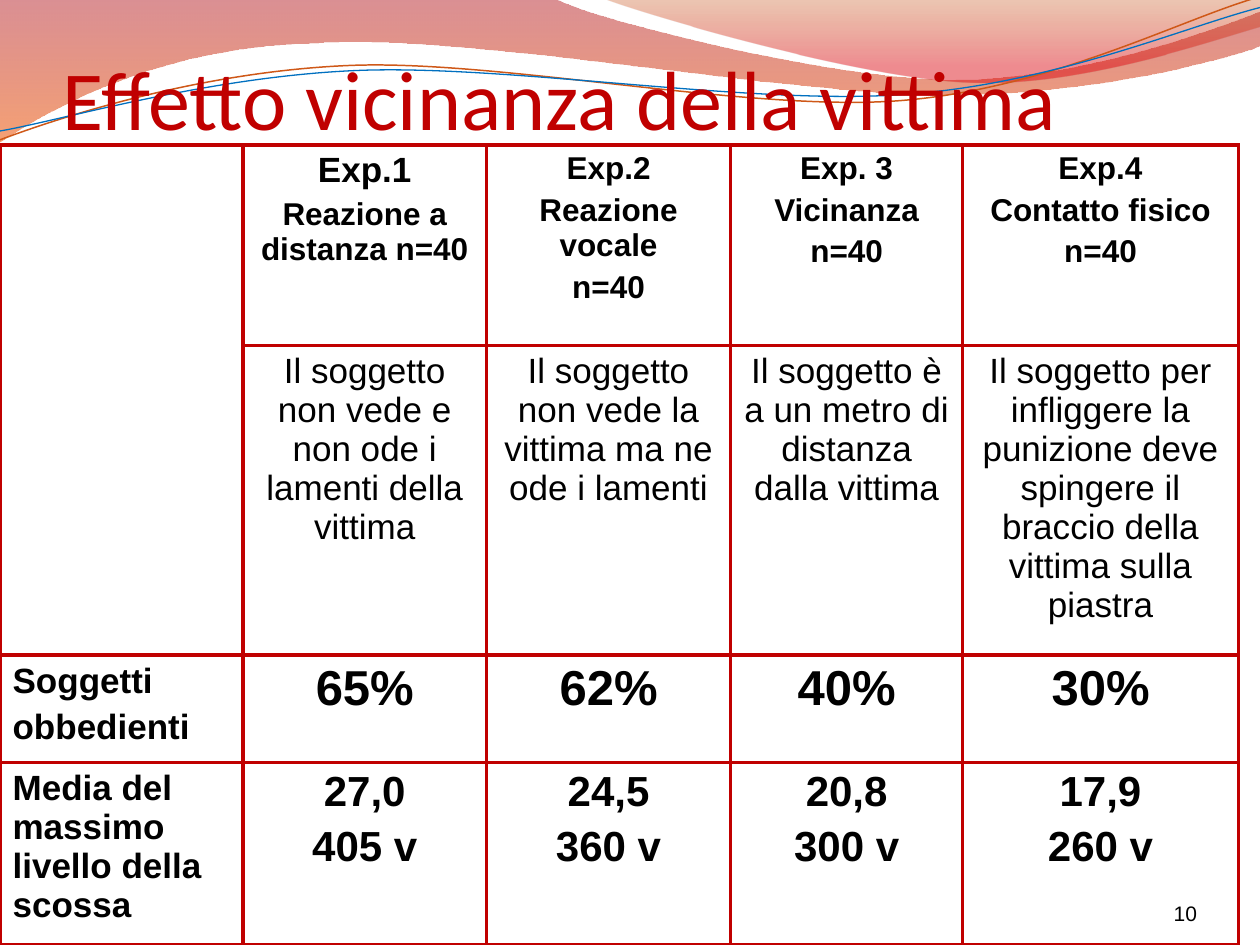
from math import cos, radians, sin

from lxml import etree
from pptx import Presentation
from pptx.dml.color import RGBColor
from pptx.enum.text import MSO_ANCHOR as Anchor, PP_ALIGN as Align
from pptx.oxml.ns import qn
from pptx.util import Inches, Pt

RED = "C00000"
BLACK = "000000"
STRAND_TILT = 357.3


def rgb(value):
    return RGBColor.from_string(value)


def turn(point, centre, degrees):
    """Turn a point clockwise about a centre."""
    x, y = point[0] - centre[0], point[1] - centre[1]
    c, s = cos(radians(degrees)), sin(radians(degrees))
    return centre[0] + x * c - y * s, centre[1] + x * s + y * c


class SlideBuilder:
    def __init__(self, slide):
        self.slide = slide
        self.border_width = Pt(2.25)

    def outline(self, segments, close):
        """Draw segments of points: one point is a line, three are a cubic curve."""
        segments = [[(Inches(x), Inches(y)) for x, y in points] for points in segments]
        ends = [points[-1] for points in segments]
        builder = self.slide.shapes.build_freeform(*ends[0])
        builder.add_line_segments(ends[1:], close=close)
        shape = builder.convert_to_shape()
        shape.shadow.inherit = False
        lines = list(shape._element.spPr.iter(qn("a:lnTo")))
        for line, points in zip(lines, segments[1:]):
            if len(points) == 3:
                curve = etree.Element(qn("a:cubicBezTo"))
                for x, y in points:
                    etree.SubElement(curve, qn("a:pt"),
                                     x=str(x - shape.left), y=str(y - shape.top))
                line.getparent().replace(line, curve)
        return shape

    def wave(self, segments, stops):
        """Add a closed shape with a downward gradient of (position, colour, opacity %)."""
        shape = self.outline(segments, True)
        shape.line.fill.background()
        shape.fill.gradient()
        shape.fill.gradient_angle = 270
        for stop, (position, colour, _) in zip(shape.fill.gradient_stops, stops):
            stop.position = position
            stop.color.rgb = rgb(colour)
        colours = shape._element.spPr.iter(qn("a:srgbClr"))
        for element, (_, _, opacity) in zip(colours, stops):
            etree.SubElement(element, qn("a:alpha"), val=str(opacity * 1000))

    def strand(self, segments, centre, colour, width):
        """Add a tilted open curve, given by its points as they lie on the slide."""
        level = [[turn(point, centre, -STRAND_TILT) for point in points] for points in segments]
        shape = self.outline(level, False)
        shape.rotation = STRAND_TILT
        shape.fill.background()
        shape.line.color.rgb = rgb(colour)
        shape.line.width = Pt(width)

    def style(self, paragraph, size, colour=BLACK, font="Arial", bold=False, align=Align.LEFT):
        paragraph.alignment = align
        for run in paragraph.runs:
            run.font.size = Pt(size)
            run.font.name = font
            run.font.bold = bold
            run.font.color.rgb = rgb(colour)

    def text(self, words, box, size, top_inset=0, **look):
        frame = self.slide.shapes.add_textbox(*map(Inches, box)).text_frame
        frame.word_wrap = True
        frame.vertical_anchor = Anchor.BOTTOM
        frame.margin_left = frame.margin_right = frame.margin_bottom = 0
        frame.margin_top = Inches(top_inset)
        frame.text = words
        self.style(frame.paragraphs[0], size, **look)

    def table(self, left, top, widths, heights):
        table = self.slide.shapes.add_table(
            len(heights), len(widths), Inches(left), Inches(top),
            Inches(sum(widths)), Inches(sum(heights))).table
        table.first_row = table.horz_banding = False
        for column, width in zip(table.columns, widths):
            column.width = Inches(width)
        for row, height in zip(table.rows, heights):
            row.height = Inches(height)
        for cell in table.iter_cells():
            self.border(cell)
            cell.fill.background()
        return table

    def border(self, cell):
        properties = cell._tc.get_or_add_tcPr()
        for side in ("a:lnL", "a:lnR", "a:lnT", "a:lnB"):
            line = etree.SubElement(properties, qn(side), w=str(self.border_width))
            fill = etree.SubElement(line, qn("a:solidFill"))
            etree.SubElement(fill, qn("a:srgbClr"), val=RED)

    def cell(self, cell, words, sizes, bold, align):
        """Fill a cell; the last size holds for all remaining paragraphs."""
        cell.text_frame.text = words
        for index, paragraph in enumerate(cell.text_frame.paragraphs):
            size = sizes[min(index, len(sizes) - 1)]
            self.style(paragraph, size, bold=bold, align=align)
            paragraph.space_before = Pt(size * 0.2)


EXPERIMENTS = [
    ("Exp.1\nReazione a distanza n=40",
     "Il soggetto non vede e non ode i lamenti della vittima", "65%", "27,0\n405 v"),
    ("Exp.2\nReazione vocale\nn=40",
     "Il soggetto non vede la vittima ma ne ode i lamenti", "62%", "24,5\n360 v"),
    ("Exp. 3\nVicinanza\nn=40",
     "Il soggetto è a un metro di distanza dalla vittima", "40%", "20,8\n300 v"),
    ("Exp.4\nContatto fisico\nn=40",
     "Il soggetto per infliggere la punizione deve spingere il braccio della vittima sulla piastra",
     "30%", "17,9\n260 v"),
]
ROW_LABELS = {2: "Soggetti\nobbedienti", 3: "Media del massimo livello della scossa"}
ROW_SIZES = [18, 20, 28, 24]


def main():
    deck = Presentation()
    deck.slide_width, deck.slide_height = Inches(10), Inches(7.5)
    page = SlideBuilder(deck.slides.add_slide(deck.slide_layouts[6]))

    page.wave([
        [(0, 0)], [(4.4, -0.01)],
        [(4.76, 0.17), (6.64, 0.63), (7.58, 0.63)],
        [(8.53, 0.63), (9.58, 0.26), (10, 0.09)],
        [(10.01, 0.36)],
        [(9.83, 0.44), (8.7, 0.76), (7.46, 0.75)],
        [(6.22, 0.75), (3.82, 0.28), (2.57, 0.34)],
        [(1.29, 0.36), (0.46, 0.83), (-0.01, 1.13)],
        [(0, 0)],
    ], [(0, "AF0911", 45), (1, "EE5300", 55)])
    page.wave([
        [(4.79, -0.01)],
        [(5.09, 0.11), (6.82, 0.62), (7.69, 0.65)],
        [(8.56, 0.69), (9.61, 0.32), (10, 0.21)],
        [(10, 0)], [(4.79, -0.01)],
    ], [(0, "C24400", 30), (0.8, "DC000B", 45)])
    page.strand([
        [(0, 1.11)],
        [(0.48, 0.93), (1.58, 0.57), (2.77, 0.52)],
        [(3.95, 0.47), (5.93, 0.89), (7.13, 0.8)],
        [(8.33, 0.71), (9.38, 0.15), (9.98, -0.02)],
    ], (4.99, 0.57), "CF5818", 0.85)
    page.strand([
        [(0, 1.04)],
        [(0.47, 0.96), (1.64, 0.61), (2.83, 0.56)],
        [(4.03, 0.51), (5.97, 0.84), (7.17, 0.75)],
        [(8.36, 0.67), (9.41, 0.21), (10, 0.06)],
    ], (5, 0.59), "0070C0", 0.75)

    page.text("Effetto vicinanza della vittima", (0.5, 0.3, 9, 0.87), 48,
              top_inset=0.05, colour=RED, font="Calibri")

    results = page.table(0, 1.15, [1.93, 1.93, 1.94, 1.84, 2.19], [1.59, 2.46, 0.85, 1.45])
    results.cell(0, 0).merge(results.cell(1, 0))
    for row, label in ROW_LABELS.items():
        page.cell(results.cell(row, 0), label, [20], True, Align.LEFT)
    for column, experiment in enumerate(EXPERIMENTS, start=1):
        for row, words in enumerate(experiment):
            sizes = [20, 18] if (row, column) == (0, 1) else [ROW_SIZES[row]]
            page.cell(results.cell(row, column), words, sizes, row != 1, Align.CENTER)

    page.text("10", (8.67, 6.95, 0.83, 0.4), 12, align=Align.RIGHT)
    deck.save("out.pptx")


if __name__ == "__main__":
    main()
